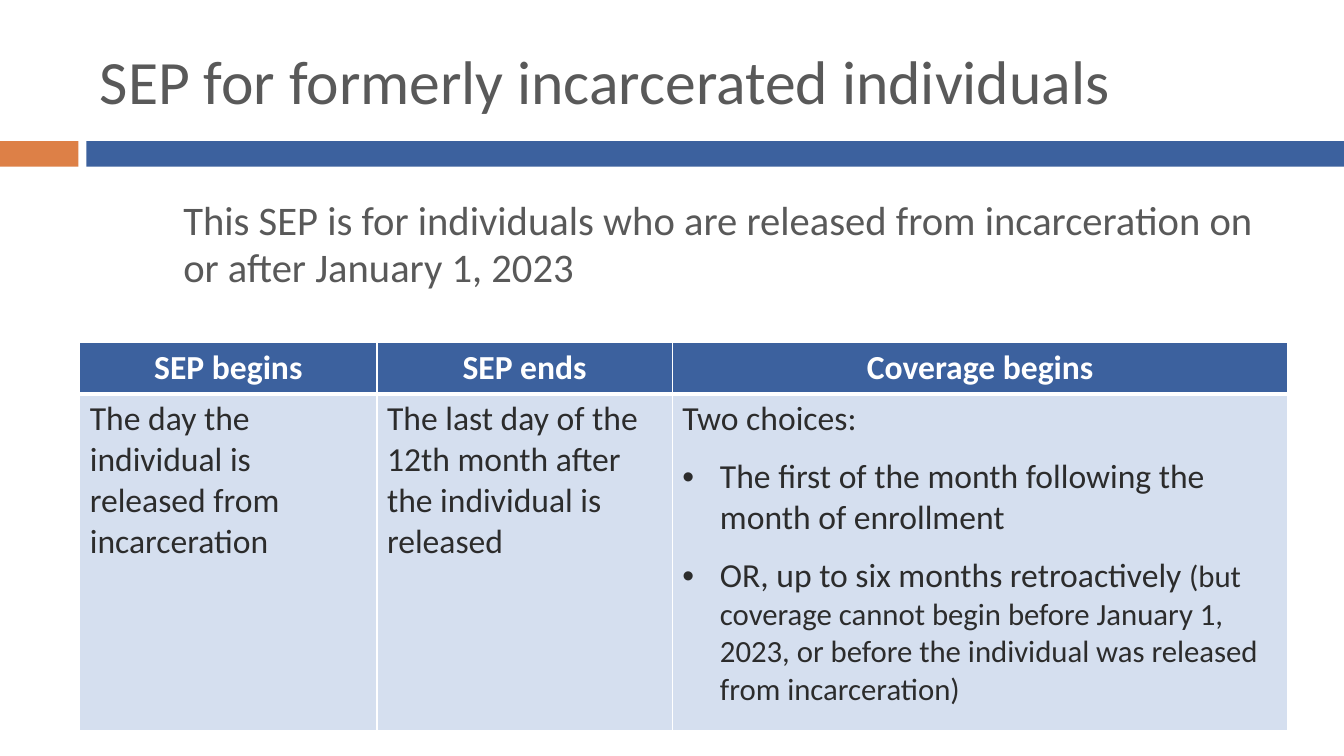
from pptx import Presentation
from pptx.dml.color import RGBColor
from pptx.enum.shapes import MSO_SHAPE
from pptx.enum.text import MSO_ANCHOR, MSO_AUTO_SIZE, PP_ALIGN
from pptx.oxml.ns import qn
from pptx.util import Cm, Pt
from lxml import etree

RECT = MSO_SHAPE.RECTANGLE
MIDDLE = MSO_ANCHOR.MIDDLE
NO_FIT = MSO_AUTO_SIZE.NONE
LEFT, CENTER = PP_ALIGN.LEFT, PP_ALIGN.CENTER
WIDTH, HEIGHT = 33.87, 19.05
BLUE, ORANGE, WHITE = "3C619E", "DD8047", "FFFFFF"
GREY, INK, PALE = "595959", "2C2C2C", "D5DFEF"
HEADERS = ["SEP begins", "SEP ends", "Coverage begins"]
BEGINS = "The day the individual is released from incarceration"
ENDS = "The last day of the 12th month after the individual is released"
CHOICES = [
    [("The first of the month following the month of enrollment", 24)],
    [("OR, up to six months retroactively ", 24),
     ("(but coverage cannot begin before January 1, 2023, or before the "
      "individual was released from incarceration)", 22)],
]


def rgb(value):
    """Return the colour for a hex string."""
    return RGBColor.from_string(value)


def add_text(p, text, size=24, color=INK, bold=False, align=LEFT,
             before=0, after=0, spacing=None):
    """Add a formatted run to a paragraph and set the paragraph spacing."""
    p.alignment = align
    p.space_before, p.space_after = Pt(before), Pt(after)
    p.line_spacing = spacing
    r = p.add_run()
    r.text = text
    r.font.name, r.font.size, r.font.bold = "Calibri", Pt(size), bold
    r.font.color.rgb = rgb(color)


def add_bullet(p, indent):
    """Give a paragraph a round bullet with a hanging indent."""
    pPr = p._p.get_or_add_pPr()
    pPr.set("marL", str(Cm(indent)))
    pPr.set("indent", str(-Cm(indent)))
    etree.SubElement(pPr, qn("a:buFont")).set("typeface", "Arial")
    etree.SubElement(pPr, qn("a:buChar")).set("char", "•")


def style_cell(cell, fill, bottom):
    """Fill a cell and draw its white borders."""
    tcPr = cell._tc.get_or_add_tcPr()
    for tag, width in (("lnL", 1), ("lnR", 1), ("lnT", 1), ("lnB", bottom)):
        ln = etree.SubElement(tcPr, qn("a:" + tag), w=str(Pt(width)))
        solid = etree.SubElement(ln, qn("a:solidFill"))
        etree.SubElement(solid, qn("a:srgbClr")).set("val", WHITE)
    cell.fill.solid()
    cell.fill.fore_color.rgb = rgb(fill)


def add_title(s, x, y, w, h):
    """Place the slide title."""
    sp = s.shapes.title
    sp.left, sp.top, sp.width, sp.height = Cm(x), Cm(y), Cm(w), Cm(h)
    tf = sp.text_frame
    tf.vertical_anchor, tf.auto_size = MIDDLE, NO_FIT
    add_text(tf.paragraphs[0], "SEP for formerly incarcerated individuals",
             size=44, color=GREY)


def add_band(s, x, y, w, h):
    """Draw the two-colour band, with a gap after the orange block."""
    block, gap = 1.98, 0.2
    rest = block + gap
    for left, width, color in ((x, block, ORANGE), (x + rest, w - rest, BLUE)):
        sp = s.shapes.add_shape(RECT, Cm(left), Cm(y), Cm(width), Cm(h))
        sp.shadow.inherit = False
        sp.fill.solid()
        sp.fill.fore_color.rgb = rgb(color)
        sp.line.fill.background()


def add_intro(s, x, y, w, h):
    """Place the sentence that says who the SEP is for."""
    tf = s.shapes.add_textbox(Cm(x), Cm(y), Cm(w), Cm(h)).text_frame
    tf.word_wrap = True
    add_text(tf.paragraphs[0], "This SEP is for individuals who are released "
             "from incarceration on or after January 1, 2023",
             size=29, color=GREY, before=7, spacing=0.97)


def add_periods(s, x, y, w, h):
    """Build the table of enrollment and coverage dates."""
    header = 1.28
    frame = s.shapes.add_table(2, 3, Cm(x), Cm(y), Cm(w), Cm(h))
    table = frame.table
    table.horz_banding = False
    for column, width in zip(table.columns, (7.49, 7.44, w - 14.93)):
        column.width = Cm(width)
    table.rows[0].height, table.rows[1].height = Cm(header), Cm(h - header)
    for i, (head, body) in enumerate(zip(HEADERS, (BEGINS, ENDS, "Two choices:"))):
        top, cell = table.cell(0, i), table.cell(1, i)
        style_cell(top, BLUE, 3)
        style_cell(cell, PALE, 1)
        add_text(top.text_frame.paragraphs[0], head, color=WHITE, bold=True,
                 align=CENTER)
        add_text(cell.text_frame.paragraphs[0], body, after=12 if i == 2 else 0)
    for choice in CHOICES:
        p = table.cell(1, 2).text_frame.add_paragraph()
        for text, size in choice:
            add_text(p, text, size=size, after=12)
        add_bullet(p, 0.95)


def main():
    """Build and save the slide."""
    prs = Presentation()
    prs.slide_width, prs.slide_height = Cm(WIDTH), Cm(HEIGHT)
    s = prs.slides.add_slide(prs.slide_layouts[5])
    add_band(s, 0, 3.56, WIDTH, 0.64)
    add_title(s, 2.26, 0.64, 30.2, 2.74)
    add_intro(s, 4.37, 4.85, 27.66, 2.74)
    add_periods(s, 2.01, 8.64, 30.45, 9.78)
    prs.save("out.pptx")


if __name__ == "__main__":
    main()
